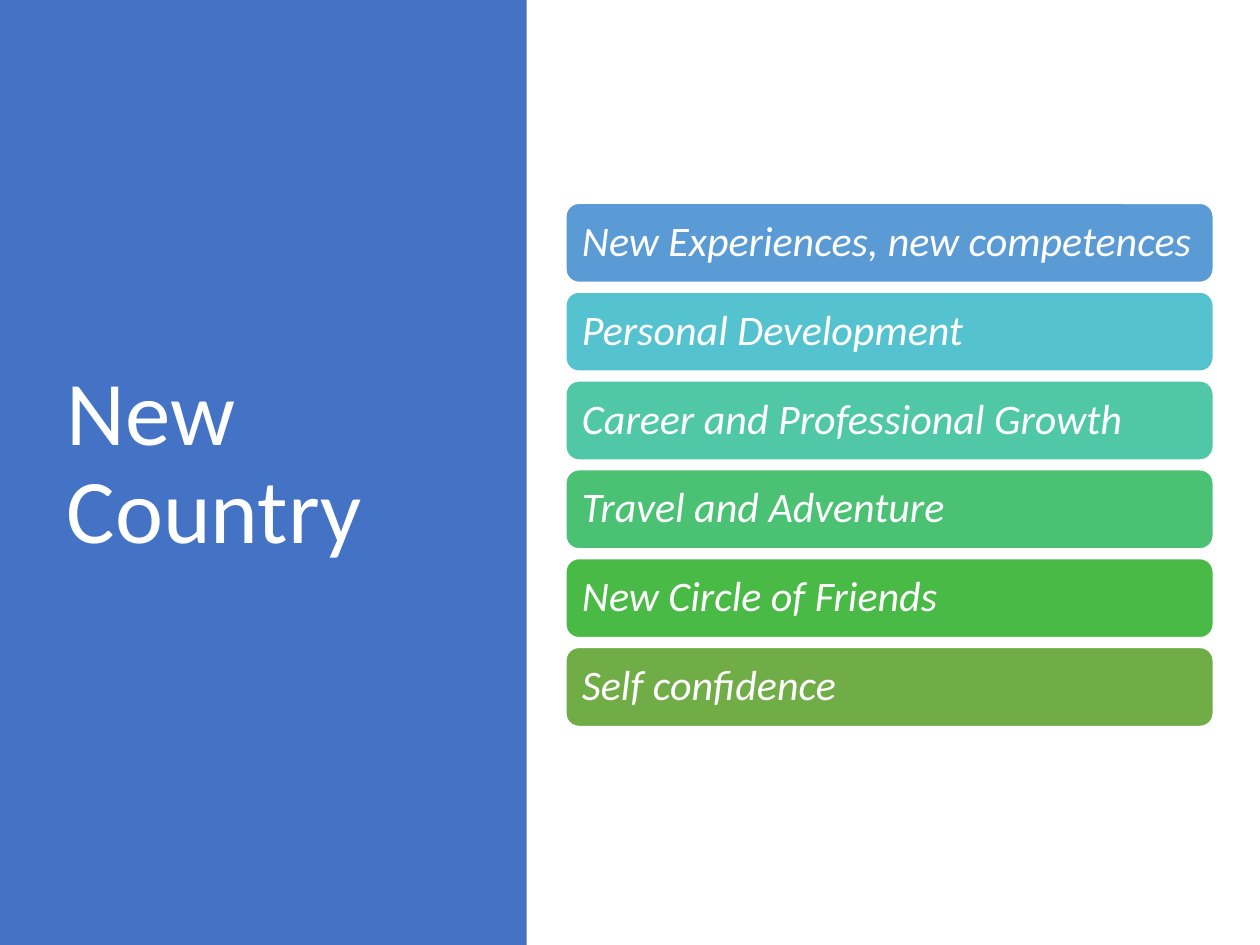
import pptx
import pptx.dml.color
import pptx.enum.shapes
import pptx.enum.text
import pptx.util

SLIDE_WIDTH, SLIDE_HEIGHT = 10, 7.5
WHITE = "FFFFFF"
BENEFITS = [
    ("New Experiences, new competences", "5B9BD5"),
    ("Personal Development", "55C3CF"),
    ("Career and Professional Growth", "50C8A7"),
    ("Travel and Adventure", "4BC174"),
    ("New Circle of Friends", "4ABA46"),
    ("Self confidence", "70AD47"),
]
BAR_LEFT, BAR_WIDTH, BAR_HEIGHT = 4.49, 5.14, 0.63
BAR_PITCH = 0.705
STACK_HEIGHT = (len(BENEFITS) - 1) * BAR_PITCH + BAR_HEIGHT
STACK_TOP = (SLIDE_HEIGHT - STACK_HEIGHT) / 2 - 0.06


def color(hex_value):
    return pptx.dml.color.RGBColor.from_string(hex_value)


def inches(*lengths):
    return [pptx.util.Inches(length) for length in lengths]


def add_block(slide, kind, box, fill):
    block = slide.shapes.add_shape(kind, *inches(*box))
    block.shadow.inherit = False
    block.fill.solid()
    block.fill.fore_color.rgb = color(fill)
    block.line.fill.background()
    return block


def write(frame, text, size, italic=False):
    frame.word_wrap = True
    frame.vertical_anchor = pptx.enum.text.MSO_ANCHOR.MIDDLE
    frame.margin_left = frame.margin_right = pptx.util.Inches(0.1)
    paragraph = frame.paragraphs[0]
    paragraph.text = text
    paragraph.alignment = pptx.enum.text.PP_ALIGN.LEFT
    paragraph.line_spacing = 0.9
    paragraph.font.name = "Calibri"
    paragraph.font.size = pptx.util.Pt(size)
    paragraph.font.italic = italic
    paragraph.font.color.rgb = color(WHITE)


def add_benefit(slide, row, text, fill):
    box = (BAR_LEFT, STACK_TOP + row * BAR_PITCH, BAR_WIDTH, BAR_HEIGHT)
    bar = add_block(slide, pptx.enum.shapes.MSO_SHAPE.ROUNDED_RECTANGLE, box, fill)
    bar.line.color.rgb = color(WHITE)
    bar.line.width = pptx.util.Pt(1)
    write(bar.text_frame, text, 24, italic=True)


def main():
    deck = pptx.Presentation()
    deck.slide_width, deck.slide_height = inches(SLIDE_WIDTH, SLIDE_HEIGHT)
    slide = deck.slides.add_slide(deck.slide_layouts[6])
    add_block(slide, pptx.enum.shapes.MSO_SHAPE.RECTANGLE,
              (0, 0, 4.18, SLIDE_HEIGHT), "4472C4")
    title = slide.shapes.add_textbox(*inches(0.43, 0.68, 3.12, 6.02))
    write(title.text_frame, "New Country", 52)
    for row, (text, fill) in enumerate(BENEFITS):
        add_benefit(slide, row, text, fill)
    deck.save("out.pptx")


if __name__ == "__main__":
    main()
